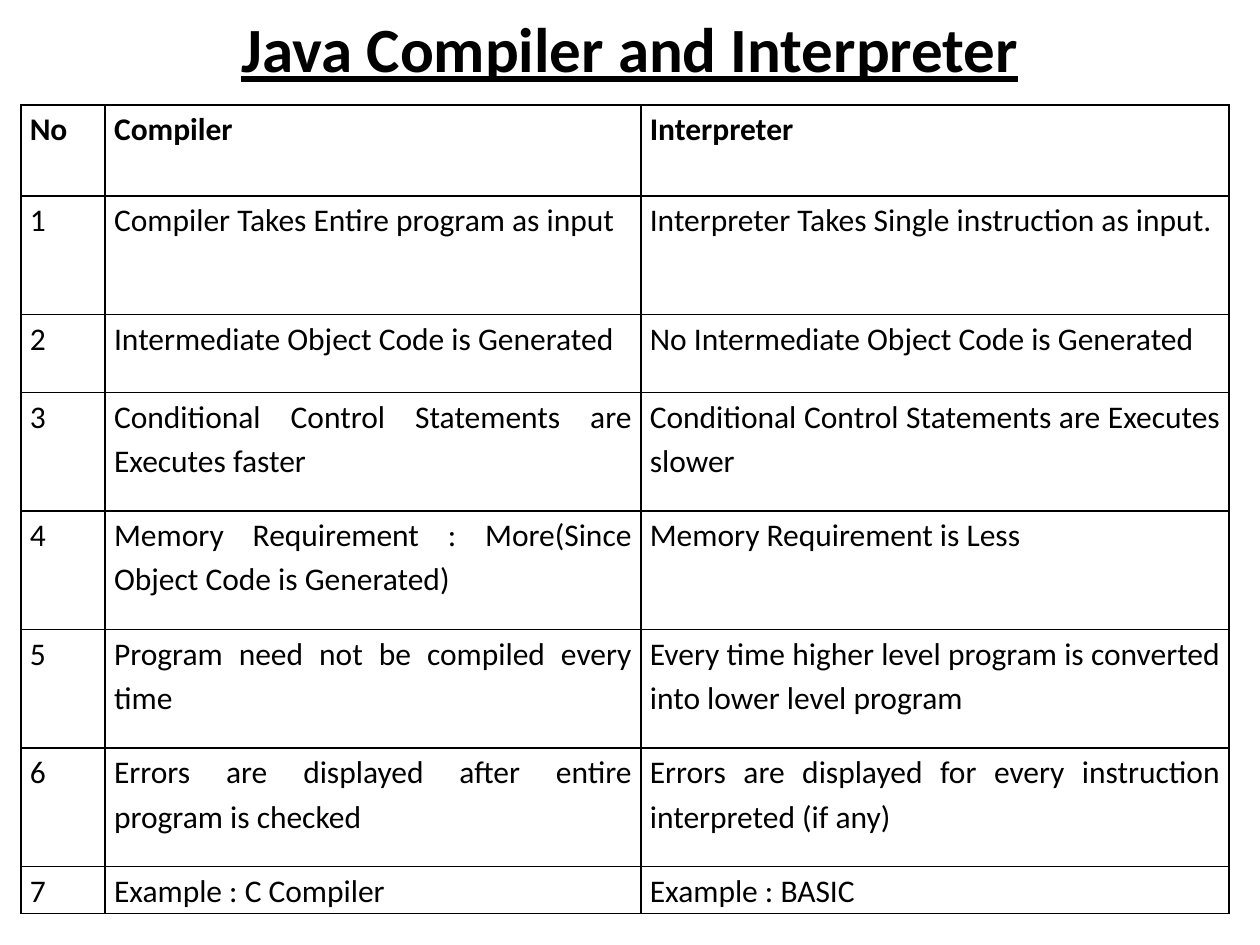
import pptx
import pptx.util
import pptx.dml.color
import pptx.enum.text
import pptx.oxml
import pptx.oxml.ns

Cm = pptx.util.Cm
Pt = pptx.util.Pt
ALIGN = pptx.enum.text.PP_ALIGN

HEADING = "Java Compiler and Interpreter"
HEADERS = ("No", "Compiler", "Interpreter")
DIFFERENCES = [
    ("Compiler Takes Entire program as input",
     "Interpreter Takes Single instruction as input."),
    ("Intermediate Object Code is Generated",
     "No Intermediate Object Code is Generated"),
    ("Conditional Control Statements are Executes faster",
     "Conditional Control Statements are Executes slower"),
    ("Memory Requirement : More(Since Object Code is Generated)",
     "Memory Requirement is Less"),
    ("Program need not be compiled every time",
     "Every time higher level program is converted into lower level program"),
    ("Errors are displayed after entire program is checked",
     "Errors are displayed for every instruction interpreted (if any)"),
    ("Example : C Compiler", "Example : BASIC"),
]
COLORS = {"text": "000000", "border": "000000"}
FONT = "Calibri"
COLUMN_WIDTHS = (1.7, 10.8, 11.86)
ROW_HEIGHTS = (1.83, 2.39, 1.57, 2.39, 2.39, 2.39, 2.39, 0.94)


def style_font(font, size, bold):
    font.name = FONT
    font.size = Pt(size)
    font.bold = bold
    font.color.rgb = pptx.dml.color.RGBColor.from_string(COLORS["text"])


def add_borders(cell):
    properties = cell._tc.get_or_add_tcPr()
    for side in ("lnL", "lnR", "lnT", "lnB"):
        properties.append(pptx.oxml.parse_xml(
            f'<a:{side} {pptx.oxml.ns.nsdecls("a")} w="{Pt(1)}"><a:solidFill>'
            f'<a:srgbClr val="{COLORS["border"]}"/></a:solidFill></a:{side}>'))


def fill_cell(cell, text, is_header):
    cell.margin_left = cell.margin_right = Cm(0.18)
    cell.margin_top = cell.margin_bottom = 0
    cell.text = text
    paragraph = cell.text_frame.paragraphs[0]
    paragraph.alignment = ALIGN.LEFT if is_header else ALIGN.JUSTIFY
    paragraph.line_spacing = 1.15
    style_font(paragraph.font, 18, is_header)
    add_borders(cell)
    cell.fill.background()


def main():
    deck = pptx.Presentation()
    deck.slide_width, deck.slide_height = Cm(25.4), Cm(19.05)
    slide = deck.slides.add_slide(deck.slide_layouts[5])

    title = slide.shapes.title
    title.left, title.top = Cm(1.27), Cm(-0.64)
    title.width, title.height = Cm(22.86), Cm(3.18)
    title.text_frame.text = HEADING
    title.text_frame.vertical_anchor = pptx.enum.text.MSO_ANCHOR.MIDDLE
    heading = title.text_frame.paragraphs[0]
    heading.alignment = ALIGN.CENTER
    style_font(heading.font, 36, True)
    heading.font.underline = True

    rows = [HEADERS] + [(str(number), *pair)
                        for number, pair in enumerate(DIFFERENCES, 1)]
    comparison = slide.shapes.add_table(
        len(rows), len(HEADERS), Cm(0.42), Cm(2.12),
        Cm(sum(COLUMN_WIDTHS)), Cm(sum(ROW_HEIGHTS))).table
    comparison.horz_banding = False
    for column, width in zip(comparison.columns, COLUMN_WIDTHS):
        column.width = Cm(width)
    for row, height in zip(comparison.rows, ROW_HEIGHTS):
        row.height = Cm(height)
    for row_index, texts in enumerate(rows):
        for column_index, text in enumerate(texts):
            fill_cell(comparison.cell(row_index, column_index), text, row_index == 0)

    deck.save("out.pptx")


if __name__ == "__main__":
    main()
